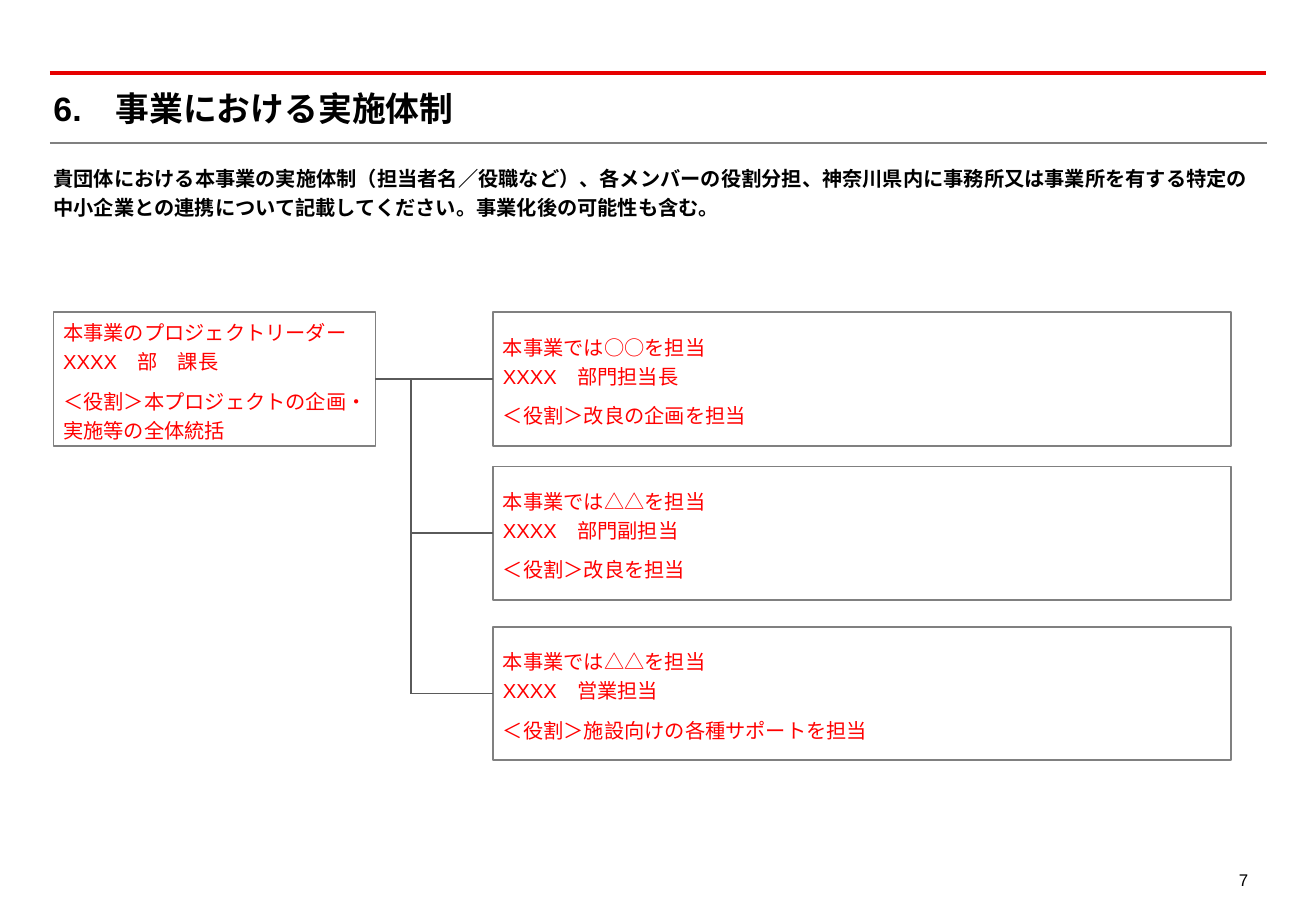
from dataclasses import dataclass

from lxml.etree import SubElement
from pptx import Presentation
from pptx.dml.color import RGBColor
from pptx.enum.shapes import MSO_CONNECTOR, MSO_SHAPE
from pptx.enum.text import MSO_ANCHOR, MSO_AUTO_SIZE, PP_ALIGN
from pptx.oxml.ns import qn
from pptx.util import Pt

EMU_PER_PX = 9144
BOX_HEIGHT = 110
LEADER_LEFT, LEADER_TOP, LEADER_WIDTH = 44, 257, 265
MEMBER_LEFT, MEMBER_WIDTH = 406, 607
TRUNK_X = 338

LEADER = ["本事業のプロジェクトリーダー\nXXXX　部　課長",
          "＜役割＞本プロジェクトの企画・\n実施等の全体統括"]
MEMBERS = [
    (257, ["本事業では○○を担当\nXXXX　部門担当長", "＜役割＞改良の企画を担当"]),
    (384, ["本事業では△△を担当\nXXXX　部門副担当", "＜役割＞改良を担当"]),
    (516, ["本事業では△△を担当\nXXXX　営業担当", "＜役割＞施設向けの各種サポートを担当"]),
]
LEAD = ("貴団体における本事業の実施体制（担当者名／役職など）、各メンバーの役割分担、"
        "神奈川県内に事務所又は事業所を有する特定の中小企業との連携について記載してください。"
        "事業化後の可能性も含む。")


@dataclass(frozen=True)
class Theme:
    """Colours, font and type sizes of the slide."""
    font: str = "Arial"
    ink: str = "000000"
    sample: str = "FF0000"
    accent: str = "E60000"
    border: str = "808080"
    link: str = "5A5A5A"
    title_size: int = 20
    body_size: int = 12
    page_size: int = 10


THEME = Theme()


def px(*lengths):
    """Turn px lengths into EMU."""
    return [length * EMU_PER_PX for length in lengths]


def write(frame, paragraphs, size=THEME.body_size, color=THEME.ink, bold=False,
          align=PP_ALIGN.LEFT, anchor=MSO_ANCHOR.TOP, spacing=1.2, before=0,
          insets=(0, 0, 0, 0), wrap=True):
    """Fill a text frame with formatted paragraphs."""
    frame.auto_size = MSO_AUTO_SIZE.NONE
    frame.word_wrap = wrap
    frame.vertical_anchor = anchor
    (frame.margin_left, frame.margin_top,
     frame.margin_right, frame.margin_bottom) = px(*insets)
    for index, text in enumerate(paragraphs):
        para = frame.add_paragraph() if index else frame.paragraphs[0]
        para.text = text
        para.alignment = align
        para.line_spacing = spacing
        para.space_before = Pt(before)
        for span in para.runs:
            span.font.name = THEME.font
            span.font.size = Pt(size)
            span.font.bold = bold
            span.font.color.rgb = RGBColor.from_string(color)
        for line_break in para._p.findall(qn("a:br")):
            SubElement(line_break, qn("a:rPr"), sz=str(size * 100))


def add_text(page, left, top, width, height, text, **style):
    """Add a plain text box."""
    box = page.shapes.add_textbox(*px(left, top, width, height))
    write(box.text_frame, [text], **style)


def add_title(page, text):
    """Place and format the title placeholder."""
    title = page.shapes.title
    title.left, title.top, title.width, title.height = px(44, 72, 991, 34)
    write(title.text_frame, [text], size=THEME.title_size, bold=True,
          anchor=MSO_ANCHOR.MIDDLE, spacing=1.0)


def add_line(page, start, end, color=THEME.link, width=1):
    """Draw a straight line without a shadow."""
    line = page.shapes.add_connector(MSO_CONNECTOR.STRAIGHT, *px(*start, *end))
    line.line.color.rgb = RGBColor.from_string(color)
    line.line.width = Pt(width)
    SubElement(line._element.spPr, qn("a:effectLst"))


def add_role_box(page, left, top, width, paragraphs):
    """Draw an outlined box that names a person and a role."""
    box = page.shapes.add_shape(MSO_SHAPE.RECTANGLE, *px(left, top, width, BOX_HEIGHT))
    box.shadow.inherit = False
    box.fill.background()
    box.line.color.rgb = RGBColor.from_string(THEME.border)
    box.line.width = Pt(1)
    write(box.text_frame, paragraphs, color=THEME.sample, anchor=MSO_ANCHOR.MIDDLE,
          before=THEME.body_size / 2, insets=(8, 2, 4, 2))


def add_team(page):
    """Draw the leader, the members and the lines between them."""
    add_role_box(page, LEADER_LEFT, LEADER_TOP, LEADER_WIDTH, LEADER)
    centers = [top + BOX_HEIGHT // 2 for top, _ in MEMBERS]
    for index, (top, paragraphs) in enumerate(MEMBERS):
        add_role_box(page, MEMBER_LEFT, top, MEMBER_WIDTH, paragraphs)
        start_x = TRUNK_X if index else LEADER_LEFT + LEADER_WIDTH
        add_line(page, (start_x, centers[index]), (MEMBER_LEFT, centers[index]))
    add_line(page, (TRUNK_X, centers[0]), (TRUNK_X, centers[-1]))


def main():
    """Build the slide and save the deck."""
    deck = Presentation()
    deck.slide_width, deck.slide_height = px(1083, 750)
    page = deck.slides.add_slide(deck.slide_layouts.get_by_name("Title Only"))
    add_line(page, (41, 60), (1042, 60), color=THEME.accent, width=2)
    add_line(page, (41, 118), (1043, 118), color=THEME.border, width=1.25)
    add_title(page, "6.　事業における実施体制")
    add_text(page, 44, 133, 991, 46, LEAD, bold=True)
    add_team(page)
    add_text(page, 993, 708, 44, 28, "7", size=THEME.page_size, wrap=False,
             align=PP_ALIGN.RIGHT, insets=(10, 5, 10, 5))
    deck.save("out.pptx")


if __name__ == "__main__":
    main()
